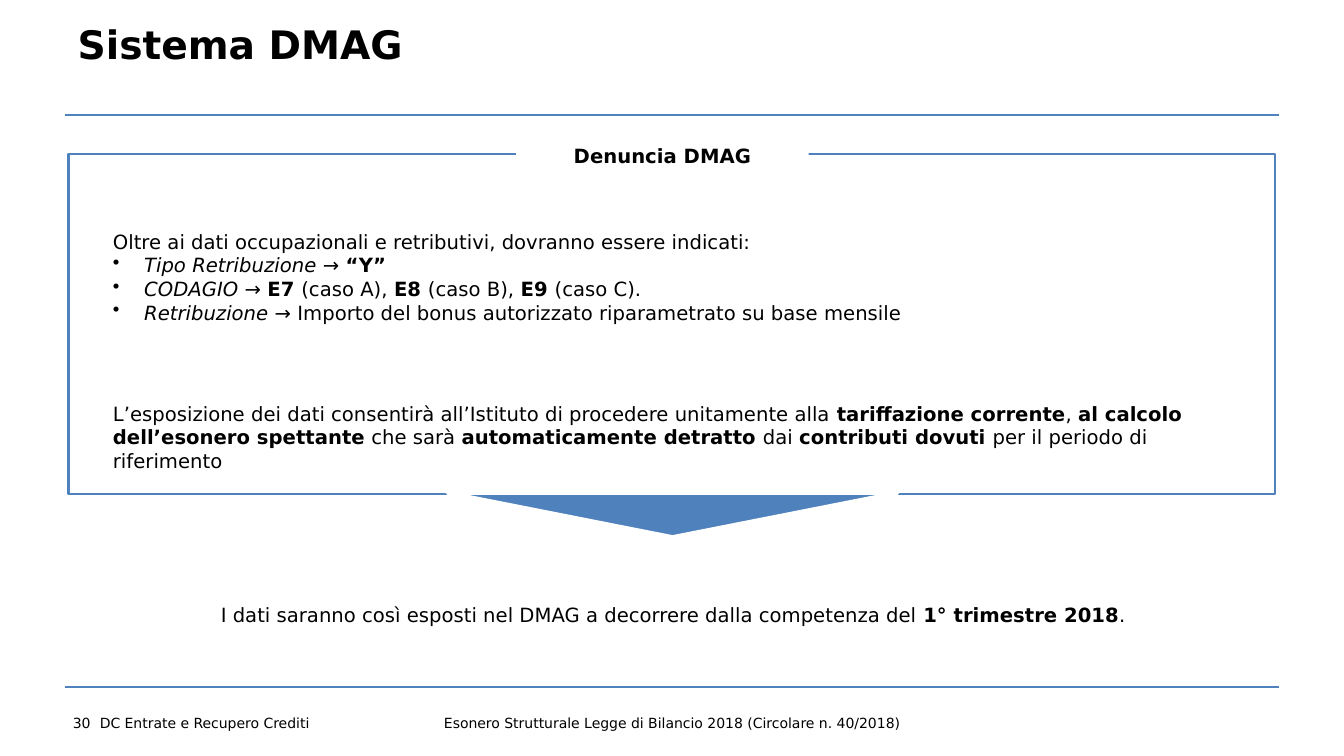
from lxml import etree
from pptx import Presentation
from pptx.dml.color import RGBColor
from pptx.enum.shapes import MSO_CONNECTOR, MSO_SHAPE
from pptx.enum.text import MSO_ANCHOR, PP_ALIGN
from pptx.oxml.ns import qn
from pptx.util import Inches, Pt

COLORS = {"blue": "4F81BD", "black": "000000", "white": "FFFFFF"}
RGB = {name: RGBColor.from_string(value) for name, value in COLORS.items()}
FONT = "DejaVu Sans"


def write_text(sp, paragraphs, size=14, align=PP_ALIGN.LEFT, anchor=MSO_ANCHOR.MIDDLE,
               inset=0.04, bullets_from=None, spacing=None):
    """Fill a shape; a paragraph is a list of (text, style), style "b", "i" or ""."""
    tf = sp.text_frame
    tf.word_wrap = True
    tf.vertical_anchor = anchor
    tf.margin_left = tf.margin_right = tf.margin_top = tf.margin_bottom = Inches(inset)
    for n, runs in enumerate(paragraphs):
        p = tf.paragraphs[0] if n == 0 else tf.add_paragraph()
        p.alignment = align
        if spacing:
            p.line_spacing = spacing
        if bullets_from is not None and n >= bullets_from:
            pPr = p._p.get_or_add_pPr()
            pPr.set("marL", str(Inches(0.31)))
            pPr.set("indent", str(-Inches(0.31)))
            etree.SubElement(pPr, qn("a:buChar")).set("char", "•")
        for text, style in runs:
            r = p.add_run()
            r.text = text
            r.font.name = FONT
            r.font.size = Pt(size)
            r.font.bold = style == "b"
            r.font.italic = style == "i"
            r.font.color.rgb = RGB["black"]


def add_block(kind, left, top, width, height, fill=None, line=None, weight=1.5):
    sp = s.shapes.add_shape(kind, Inches(left), Inches(top), Inches(width), Inches(height))
    sp.shadow.inherit = False
    if fill:
        sp.fill.solid()
        sp.fill.fore_color.rgb = RGB[fill]
    else:
        sp.fill.background()
    if line:
        sp.line.color.rgb = RGB[line]
        sp.line.width = Pt(weight)
    else:
        sp.line.fill.background()
    return sp


prs = Presentation()
prs.slide_width = Inches(13.33)
prs.slide_height = Inches(7.5)
s = prs.slides.add_slide(prs.slide_layouts[5])

# Title
title = s.shapes.title
title.left, title.top = Inches(0.67), Inches(0.22)
title.width, title.height = Inches(12.01), Inches(0.92)
write_text(title, [[("Sistema DMAG", "b")]], size=28, anchor=MSO_ANCHOR.TOP,
           spacing=0.85)
title.text_frame.margin_left = Inches(0.1)
title.text_frame.margin_top = Inches(0.05)

# Header and footer rules
for y in (1.14, 6.82):
    rule = s.shapes.add_connector(MSO_CONNECTOR.STRAIGHT, Inches(0.64), Inches(y),
                                  Inches(12.69), Inches(y))
    rule.line.color.rgb = RGB["blue"]
    rule.line.width = Pt(1.5)
    etree.SubElement(rule._element.spPr, qn("a:effectLst"))

# Frame, its label and the arrow below
add_block(MSO_SHAPE.RECTANGLE, 0.68, 1.53, 11.97, 3.37, line="blue")
label = add_block(MSO_SHAPE.RECTANGLE, 5.12, 1.36, 2.9, 0.36, fill="white")
write_text(label, [[("Denuncia DMAG", "b")]], align=PP_ALIGN.CENTER)
arrow = add_block(MSO_SHAPE.ISOSCELES_TRIANGLE, 4.44, 4.89, 4.46, 0.44,
                  fill="blue", line="white", weight=3)
arrow.rotation = 180

# Body and footer texts
required_data = [
    [("Oltre ai dati occupazionali e retributivi, dovranno essere indicati:", "")],
    [("Tipo Retribuzione ", "i"), ("→ ", ""), ("“Y”", "b")],
    [("CODAGIO ", "i"), ("→ ", ""), ("E7 ", "b"), ("(caso A), ", ""), ("E8 ", "b"),
     ("(caso B), ", ""), ("E9 ", "b"), ("(caso C).", "")],
    [("Retribuzione ", "i"),
     ("→ Importo del bonus autorizzato riparametrato su base mensile", "")],
]
effect = [[
    ("L’esposizione dei dati consentirà all’Istituto di procedere unitamente alla ", ""),
    ("tariffazione corrente", "b"), (", ", ""),
    ("al calcolo dell’esonero spettante", "b"), (" che sarà ", ""),
    ("automaticamente detratto ", "b"), ("dai ", ""), ("contributi dovuti ", "b"),
    ("per il periodo di riferimento", ""),
]]
start = [[
    ("I dati saranno così esposti nel DMAG a decorrere dalla competenza del ", ""),
    ("1° trimestre 2018", "b"), (".", ""),
]]
department = [[("DC Entrate e Recupero Crediti", "")]]
subject = [[("Esonero Strutturale Legge di Bilancio 2018 (Circolare n. 40/2018)", "")]]
center = {"align": PP_ALIGN.CENTER}
texts = [
    ((1.08, 2.24, 9.06, 1.06), required_data, {"anchor": MSO_ANCHOR.TOP, "bullets_from": 1}),
    ((1.08, 4.01, 11.28, 0.65), effect, {}),
    ((0.68, 5.57, 11.99, 1.06), start, center),
    ((0.67, 6.99, 0.28, 0.36), [[("30", "")]], {"size": 10, "inset": 0, **center}),
    ((0.95, 7.05, 3.07, 0.24), department, {"size": 10}),
    ((4.3, 7.05, 4.73, 0.24), subject, {"size": 10, **center}),
]
for box, paragraphs, style in texts:
    sp = s.shapes.add_textbox(*[Inches(v) for v in box])
    write_text(sp, paragraphs, **style)

prs.save("out.pptx")
